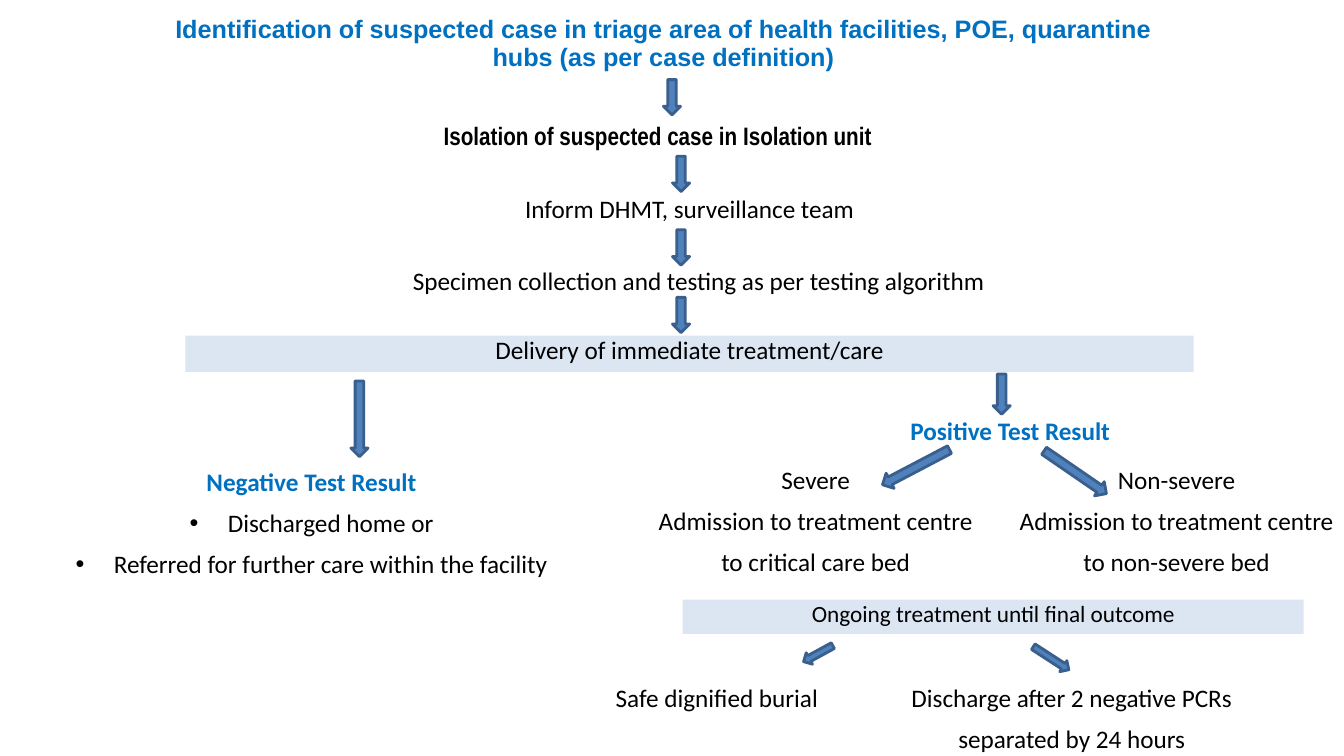
from lxml import etree
from pptx import Presentation
from pptx import util as u
from pptx.dml.color import RGBColor
from pptx.enum import shapes, text
from pptx.oxml.ns import qn

BLACK = RGBColor(0x00, 0x00, 0x00)
BLUE = RGBColor(0x00, 0x70, 0xC0)
PALE = RGBColor(0xDC, 0xE6, 0xF2)
ARROW_FILL = RGBColor(0x4F, 0x81, 0xBD)
ARROW_LINE = RGBColor(0x3A, 0x5F, 0x8C)

STEPS = [
    (1.84, 1.9, ["Inform DHMT, surveillance team"]),
    (1.93, 2.62, ["Specimen collection and testing as per testing algorithm"]),
    (3.09, 4.59, ["Severe", "Admission to treatment centre", "to critical care bed"]),
    (6.67, 4.59, ["Non-severe", "Admission to treatment centre", "to non-severe bed"]),
    (5.63, 6.75, ["Discharge after 2 negative PCRs", "separated by 24 hours"]),
    (2.11, 6.75, ["Safe dignified burial"]),
]
BANDS = [
    (1.84, 3.33, 10, 0.36, "Delivery of immediate treatment/care", 18),
    (6.77, 5.95, 6.16, 0.34, "Ongoing treatment until final outcome", 16.6),
]
ARROWS = [
    (6.58, 0.79, 0.17, 0.35, 0),
    (6.67, 1.55, 0.17, 0.35, 0),
    (6.67, 2.28, 0.17, 0.35, 0),
    (6.67, 2.95, 0.17, 0.35, 0),
    (3.48, 3.78, 0.17, 0.75, 0),
    (9.85, 3.71, 0.17, 0.4, 0),
    (9, 4.26, 0.17, 0.75, 62.3),
    (10.58, 4.31, 0.17, 0.75, 304.5),
    (8.05, 6.32, 0.13, 0.33, 61.4),
    (10.36, 6.32, 0.13, 0.42, 303),
]


def format_paragraph(p, size=18, color=BLACK, bold=False, font="Calibri",
                     align=text.PP_ALIGN.CENTER, spacing=0.9):
    """Set the alignment, line spacing and font of a paragraph."""
    p.alignment = align
    p.line_spacing = spacing
    for r in p.runs:
        r.font.size = u.Pt(size)
        r.font.name = font
        r.font.bold = bold
        r.font.color.rgb = color


def add_bullet(p):
    """Give a paragraph a hanging round bullet."""
    pPr = p._p.get_or_add_pPr()
    pPr.set("marL", str(u.Inches(0.38)))
    pPr.set("indent", str(-u.Inches(0.38)))
    etree.SubElement(pPr, qn("a:buFont")).set("typeface", "Arial")
    etree.SubElement(pPr, qn("a:buChar")).set("char", "•")


def add_step(slide, left, top, lines, **style):
    """Add a text step, one paragraph for each line."""
    sp = slide.shapes.add_textbox(u.Inches(left), u.Inches(top), u.Inches(10), u.Inches(1.81))
    tf = sp.text_frame
    tf.word_wrap = True
    tf.text = "\n".join(lines)
    for i, p in enumerate(tf.paragraphs):
        format_paragraph(p, **style)
        if i:
            p.space_before = u.Pt(10)
    return tf


def add_filled(slide, kind, left, top, width, height, color):
    """Add a filled preset shape without shadow."""
    sp = slide.shapes.add_shape(kind, u.Inches(left), u.Inches(top),
                                u.Inches(width), u.Inches(height))
    sp.shadow.inherit = False
    sp.fill.solid()
    sp.fill.fore_color.rgb = color
    return sp


def add_band(slide, left, top, width, height, label, size):
    """Add a pale band with a centred label."""
    sp = add_filled(slide, shapes.MSO_SHAPE.RECTANGLE, left, top, width, height, PALE)
    sp.line.fill.background()
    tf = sp.text_frame
    tf.word_wrap = True
    tf.vertical_anchor = text.MSO_ANCHOR.TOP
    tf.text = label
    format_paragraph(tf.paragraphs[0], size=size, spacing=0.8)


def add_arrow(slide, left, top, width, height, rotation):
    """Add a block arrow turned by the given angle."""
    sp = add_filled(slide, shapes.MSO_SHAPE.DOWN_ARROW, left, top, width, height, ARROW_FILL)
    sp.rotation = rotation
    sp.line.color.rgb = ARROW_LINE
    sp.line.width = u.Pt(2)


def add_negative_result(slide):
    """Add the negative result heading with its bulleted outcomes."""
    tf = add_step(slide, -1.91, 4.61, ["Negative Test Result", "Discharged home or",
                                      "Referred for further care within the facility"])
    heading, *outcomes = tf.paragraphs
    format_paragraph(heading, color=BLUE, bold=True)
    for p in outcomes:
        add_bullet(p)


def main():
    """Build the case management flow slide."""
    prs = Presentation()
    prs.slide_width = u.Inches(13.33)
    prs.slide_height = u.Inches(7.5)
    slide = prs.slides.add_slide(prs.slide_layouts[6])
    add_step(slide, 1.58, 0.12,
             ["Identification of suspected case in triage area of health facilities, "
              "POE, quarantine hubs (as per case definition)"],
             color=BLUE, bold=True, font="Arial")
    isolation = add_step(slide, 4.35, 1.14, ["Isolation of suspected case in Isolation unit"],
                         bold=True, font="Arial Narrow", align=text.PP_ALIGN.LEFT, spacing=1.0)
    isolation.margin_left = isolation.margin_right = u.Inches(0.05)
    add_step(slide, 5.02, 4.1, ["Positive Test Result"], color=BLUE, bold=True)
    add_negative_result(slide)
    for step in STEPS:
        add_step(slide, *step)
    for band in BANDS:
        add_band(slide, *band)
    for arrow in ARROWS:
        add_arrow(slide, *arrow)
    prs.save("out.pptx")


if __name__ == "__main__":
    main()
